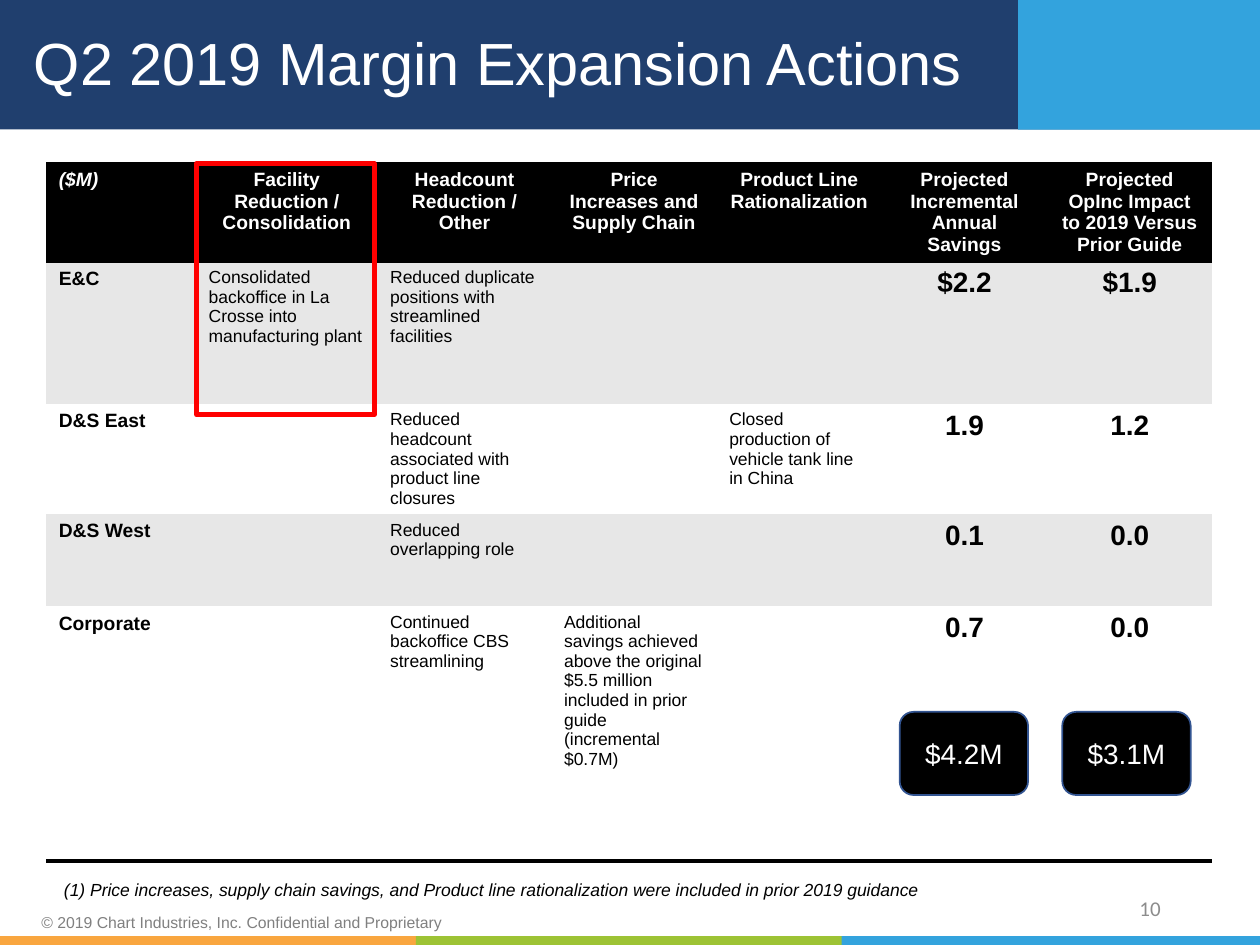
import pptx
import pptx.dml.color
import pptx.enum.shapes
import pptx.enum.text
import pptx.oxml
import pptx.oxml.ns
import pptx.util

Pt = pptx.util.Pt
ALIGN = pptx.enum.text.PP_ALIGN
SHAPE = pptx.enum.shapes.MSO_SHAPE
MIDDLE = pptx.enum.text.MSO_ANCHOR.MIDDLE

theme = {
    "navy": "203F6E", "sky": "33A3DD", "orange": "F9A63F", "green": "9DC335",
    "black": "000000", "band": "E7E7E7", "white": "FFFFFF",
    "outline": "325491", "highlight": "FF0000",
    "title": {"color": "FFFFFF", "size": 34},
    "header": {"color": "FFFFFF", "size": 11, "bold": True},
    "unit": {"color": "FFFFFF", "size": 11, "bold": True, "italic": True},
    "segment": {"color": "000000", "size": 11, "bold": True},
    "action": {"color": "000000", "size": 10, "bold": False},
    "amount": {"color": "000000", "size": 16, "bold": True},
    "total": {"color": "FFFFFF", "size": 16},
    "footnote": {"color": "000000", "size": 10, "italic": True},
    "copyright": {"color": "808080", "size": 9},
    "page": {"color": "8C8C8C", "size": 12, "name": "Calibri"},
}


def write_text(frame, text, style, align=ALIGN.LEFT, **frame_format):
    for name, value in {"word_wrap": True, **frame_format}.items():
        setattr(frame, name, value)
    paragraph = frame.paragraphs[0]
    paragraph.alignment = align
    run = paragraph.add_run()
    run.text = text
    for name, value in {"name": "Arial", **theme[style]}.items():
        if name == "color":
            run.font.color.rgb = pptx.dml.color.RGBColor.from_string(value)
        else:
            setattr(run.font, name, Pt(value) if name == "size" else value)


def add_block(kind, box, fill=None, line=None, weight=1):
    block = slide.shapes.add_shape(kind, *map(Pt, box))
    block.shadow.inherit = False
    for part, colour in ((block.fill, fill), (block.line.fill, line)):
        if colour:
            part.solid()
            part.fore_color.rgb = pptx.dml.color.RGBColor.from_string(theme[colour])
        else:
            part.background()
    if line:
        block.line.width = Pt(weight)
    return block


deck = pptx.Presentation()
deck.slide_width, deck.slide_height = Pt(720), Pt(540)
slide = deck.slides.add_slide(deck.slide_layouts[5])

for box, fill in (
    ((-0.7, 0, 721.4, 74), "navy"),
    ((581.8, -0.7, 139, 74.9), "sky"),
    ((480.2, 534.9, 240.5, 5.8), "sky"),
    ((-2.9, 534.9, 243.4, 5.8), "orange"),
    ((237.6, 534.9, 243.4, 5.8), "green"),
):
    add_block(SHAPE.RECTANGLE, box, fill)

title = slide.shapes.title
title.element.getparent().append(title.element)
for name, value in {"left": 12.2, "top": 6.5, "width": 563.8, "height": 62.6}.items():
    setattr(title, name, Pt(value))
write_text(title.text_frame, "Q2 2019 Margin Expansion Actions", "title",
           vertical_anchor=MIDDLE, auto_size=pptx.enum.text.MSO_AUTO_SIZE.NONE)
title.text_frame.paragraphs[0].line_spacing = 0.9

column_widths = [85.7, 103.7, 99.4] + [94.4] * 4
row_heights = [56, 81.4, 59.8, 52.6, 85, 49]
actions = [
    ["($M)", "Facility Reduction / Consolidation", "Headcount Reduction / Other",
     "Price Increases and Supply Chain", "Product Line Rationalization",
     "Projected Incremental Annual Savings",
     "Projected OpInc Impact to 2019 Versus Prior Guide"],
    ["E&C", "Consolidated backoffice in La Crosse into manufacturing plant",
     "Reduced duplicate positions with streamlined facilities", "", "", "$2.2", "$1.9"],
    ["D&S East", "", "Reduced headcount associated with product line closures", "",
     "Closed production of vehicle tank line in China", "1.9", "1.2"],
    ["D&S West", "", "Reduced overlapping role", "", "", "0.1", "0.0"],
    ["Corporate", "", "Continued backoffice CBS streamlining",
     "Additional savings achieved above the original $5.5 million included in prior "
     "guide (incremental $0.7M)", "", "0.7", "0.0"],
    [""] * 7,
]
row_fills = ["black", "band", "white", "band", "white", None]
row_borders = {0: ("lnT", "lnB"), 5: ("lnB",)}
column_styles = ["segment"] + ["action"] * 4 + ["amount"] * 2

savings = slide.shapes.add_table(
    len(actions), len(column_widths), Pt(26.4), Pt(93.2),
    Pt(sum(column_widths)), Pt(sum(row_heights))).table
for name in ("first_row", "horz_banding"):
    setattr(savings, name, False)
savings._tbl.tblPr.find(pptx.oxml.ns.qn("a:tableStyleId")).text = (
    "{2D5ABB26-0587-4C30-8999-92F81FD0307C}")
for column, width in zip(savings.columns, column_widths):
    column.width = Pt(width)

for r, (entries, height, fill) in enumerate(zip(actions, row_heights, row_fills)):
    savings.rows[r].height = Pt(height)
    for c, entry in enumerate(entries):
        cell = savings.cell(r, c)
        if fill:
            cell.fill.solid()
            cell.fill.fore_color.rgb = pptx.dml.color.RGBColor.from_string(theme[fill])
        else:
            cell.fill.background()
        for position, edge in enumerate(row_borders.get(r, ())):
            cell._tc.get_or_add_tcPr().insert(position, pptx.oxml.parse_xml(
                f'<a:{edge} {pptx.oxml.ns.nsdecls("a")} w="{Pt(2)}"><a:solidFill>'
                f'<a:srgbClr val="{theme["black"]}"/></a:solidFill></a:{edge}>'))
        if entry:
            style = column_styles[c]
            if r == 0:
                style = "header" if c else "unit"
            centred = style in ("header", "amount")
            write_text(cell.text_frame, entry, style,
                       ALIGN.CENTER if centred else ALIGN.LEFT)

tight = {"margin_top": Pt(1.4), "margin_bottom": Pt(1.4), "vertical_anchor": MIDDLE}
for box, text, style, align, frame_format in (
    ((16.6, 520.6, 249.8, 13), "© 2019 Chart Industries, Inc. Confidential and Proprietary",
     "copyright", ALIGN.LEFT, tight),
    ((508.3, 504.7, 162, 28.8), "10", "page", ALIGN.RIGHT, {"vertical_anchor": MIDDLE}),
    ((29.5, 499, 552.2, 19.4),
     "(1) Price increases, supply chain savings, and Product line rationalization "
     "were included in prior 2019 guidance", "footnote", ALIGN.LEFT, {}),
):
    note = slide.shapes.add_textbox(*map(Pt, box))
    write_text(note.text_frame, text, style, align, **frame_format)

for left, total in ((514.1, "$4.2M"), (607, "$3.1M")):
    badge = add_block(SHAPE.ROUNDED_RECTANGLE, (left, 406.8, 73.4, 47.5), "black", "outline")
    write_text(badge.text_frame, total, "total", ALIGN.CENTER, vertical_anchor=MIDDLE)

add_block(SHAPE.RECTANGLE, (112.3, 93.6, 101.5, 143.3), line="highlight", weight=3)

deck.save("out.pptx")
